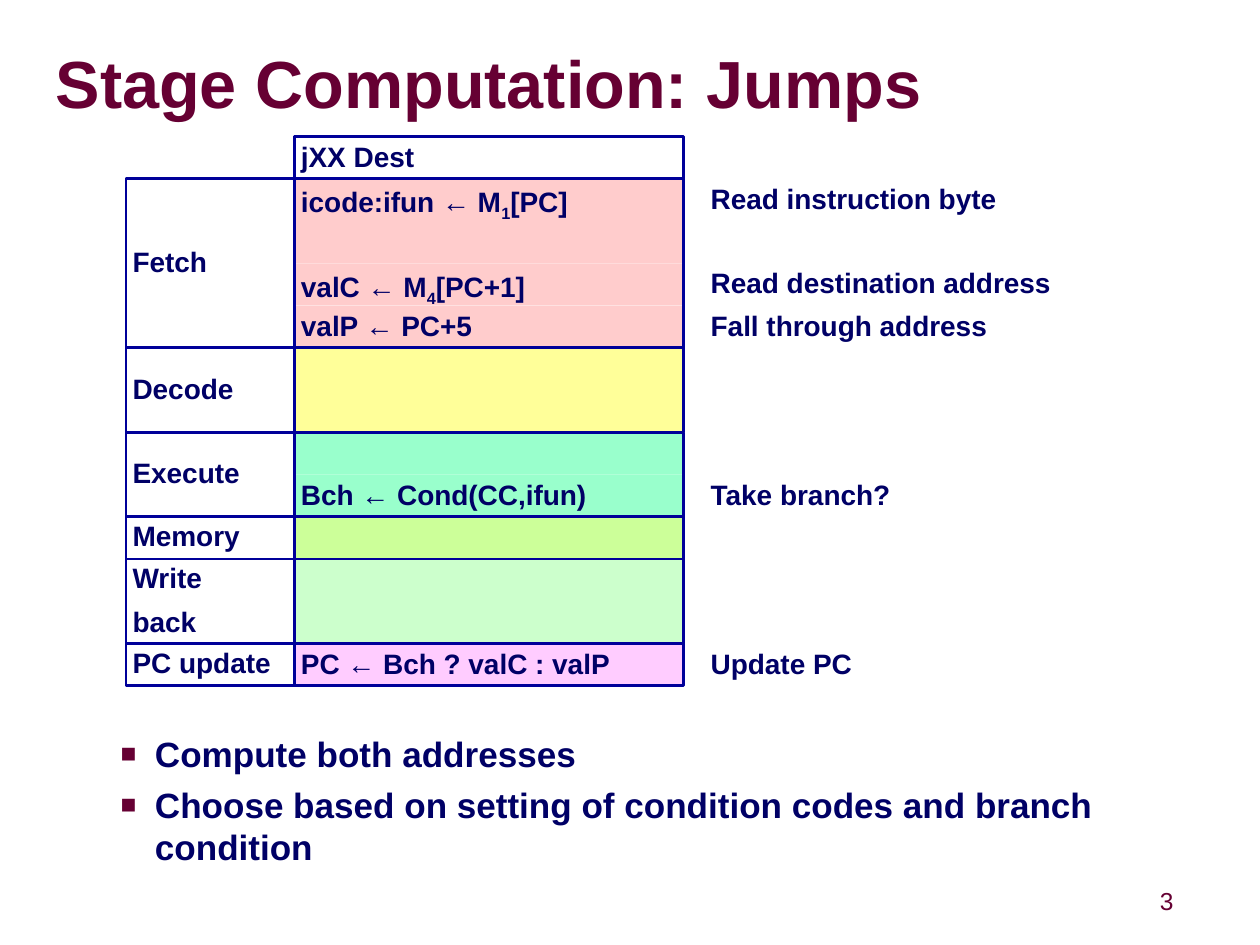
from lxml.etree import SubElement
from pptx import Presentation
from pptx.dml.color import RGBColor
from pptx.enum.shapes import MSO_SHAPE
from pptx.enum.text import MSO_ANCHOR, MSO_AUTO_SIZE, PP_ALIGN
from pptx.oxml.ns import qn
from pptx.util import Cm, Pt

WINE, NAVY, EDGE = "660033", "000066", "000099"
ROW, LABEL, CODE, GAP = 0.85, 3.39, 7.83, 0.42
STAGES = [
    ("Fetch", "FFCCCC", [("icode:ifun ← M|1|[PC]", "Read instruction byte"),
                         ("", ""),
                         ("valC ← M|4|[PC+1]", "Read destination address"),
                         ("valP ← PC+5", "Fall through address")]),
    ("Decode", "FFFF99", [("", ""), ("", "")]),
    ("Execute", "99FFCC", [("", ""), ("Bch ← Cond(CC,ifun)", "Take branch?")]),
    ("Memory", "CCFF99", [("", "")]),
    ("Write\nback", "CCFFCC", [("", ""), ("", "")]),
    ("PC update", "FFCCFF", [("PC ← Bch ? valC : valP", "Update PC")]),
]
POINTS = ["Compute both addresses",
          "Choose based on setting of condition codes and branch condition"]


def tint(part, code):
    """Give a font colour or solid fill a hex colour."""
    part.rgb = RGBColor.from_string(code)


def put(item, **vals):
    """Set each named value on the item."""
    for name, val in vals.items():
        setattr(item, name, val)


def place(shape, box):
    """Move a shape to a box of left, top, width and height in cm."""
    names = ("left", "top", "width", "height")
    put(shape, **dict(zip(names, map(Cm, box))))


def pad(frame, side, end, **vals):
    """Set the insets of a text frame, its wrap and any other values."""
    put(frame, margin_left=Cm(side), margin_right=Cm(side), margin_top=Cm(end),
        margin_bottom=Cm(end), **{"word_wrap": True, **vals})


def write(para, text, size, code, bold=True):
    """Add text to a paragraph, with parts between bars set as subscript."""
    for spot, part in enumerate(text.split("|")):
        run = para.add_run()
        run.text = part
        put(run.font, name="Arial", size=Pt(size), bold=bold)
        tint(run.font.color, code)
        if spot % 2:
            run.font._element.set("baseline", "-25000")


def fill_in(shape, text, anchor=MSO_ANCHOR.TOP):
    """Write left-aligned table text into a shape."""
    frame = shape.text_frame
    pad(frame, 0.13, 0.13, vertical_anchor=anchor)
    for spot, line in enumerate(text.split("\n")):
        para = frame.add_paragraph() if spot else frame.paragraphs[0]
        put(para, alignment=PP_ALIGN.LEFT, line_spacing=0.9,
            space_before=Pt(8 if spot else 0))
        write(para, line, 16, NAVY)


def cell(slide, box, text="", fill=None, line=True, anchor=MSO_ANCHOR.TOP):
    """Draw one box of the table."""
    shape = slide.shapes.add_shape(MSO_SHAPE.RECTANGLE, *map(Cm, box))
    shape.shadow.inherit = False
    if fill:
        shape.fill.solid()
        tint(shape.fill.fore_color, fill)
    else:
        shape.fill.background()
    if line:
        tint(shape.line.color, EDGE)
        shape.line.width = Pt(1.5)
    else:
        shape.line.fill.background()
    if text:
        fill_in(shape, text, anchor)


def stage(slide, left, top, name, fill, rows):
    """Draw a stage with its label, code rows and notes; return its height."""
    mid, tall = left + LABEL, ROW * len(rows)
    for spot, (code, note) in enumerate(rows):
        down = top + ROW * spot
        cell(slide, (mid, down, CODE, ROW), code, fill, len(rows) == 1)
        if note:
            box = (mid + CODE + GAP, down, CODE, ROW)
            fill_in(slide.shapes.add_textbox(*map(Cm, box)), note)
    if len(rows) > 1:
        cell(slide, (mid, top, CODE, tall))
    cell(slide, (left, top, LABEL, tall), name, anchor=MSO_ANCHOR.MIDDLE)
    return tall


def table(slide, left, top):
    """Draw the head and stack the stages below it."""
    cell(slide, (left + LABEL, top, CODE, ROW), "jXX Dest")
    top += ROW
    for name, fill, rows in STAGES:
        top += stage(slide, left, top, name, fill, rows)


def title(slide, box):
    """Place and write the title."""
    shape = slide.shapes.title
    place(shape, box)
    pad(shape.text_frame, 0, 0, vertical_anchor=MSO_ANCHOR.MIDDLE,
        auto_size=MSO_AUTO_SIZE.NONE)
    para = shape.text_frame.paragraphs[0]
    put(para, alignment=PP_ALIGN.LEFT, line_spacing=0.87)
    write(para, "Stage Computation: Jumps", 38, WINE)


def bullet(para):
    """Give a paragraph a hanging square bullet."""
    props = para._p.get_or_add_pPr()
    props.set("marL", str(Cm(2.06)))
    props.set("indent", str(Cm(-0.69)))
    tone = SubElement(props, qn("a:buClr"))
    SubElement(tone, qn("a:srgbClr")).set("val", WINE)
    for tag, key, val in (("a:buSzPct", "val", "75000"),
                          ("a:buFont", "typeface", "Arial"),
                          ("a:buChar", "char", "■")):
        SubElement(props, qn(tag)).set(key, val)


def body(slide, box):
    """Place and write the list."""
    shape = slide.placeholders[1]
    place(shape, box)
    frame = shape.text_frame
    pad(frame, 0.25, 0.13, auto_size=MSO_AUTO_SIZE.NONE)
    for spot, text in enumerate(POINTS):
        para = frame.add_paragraph() if spot else frame.paragraphs[0]
        put(para, level=1, alignment=PP_ALIGN.LEFT, space_before=Pt(5))
        bullet(para)
        write(para, text, 20, NAVY)


def number(slide, box):
    """Write the page number."""
    frame = slide.shapes.add_textbox(*map(Cm, box)).text_frame
    pad(frame, 0.13, 0.13, word_wrap=False, vertical_anchor=MSO_ANCHOR.MIDDLE)
    put(frame.paragraphs[0], alignment=PP_ALIGN.CENTER, line_spacing=0.9)
    write(frame.paragraphs[0], "3", 14, WINE, False)


def main():
    """Build the slide and save it."""
    deck = Presentation()
    put(deck, slide_width=Cm(25.37), slide_height=Cm(19.02))
    slide = deck.slides.add_slide(deck.slide_layouts[1])
    title(slide, (1.12, 0.69, 24.18, 2.16))
    body(slide, (0.81, 14.61, 23.04, 3.25))
    table(slide, 2.54, 2.75)
    number(slide, (23.06, 17.78, 0.86, 0.79))
    deck.save("out.pptx")


if __name__ == "__main__":
    main()
